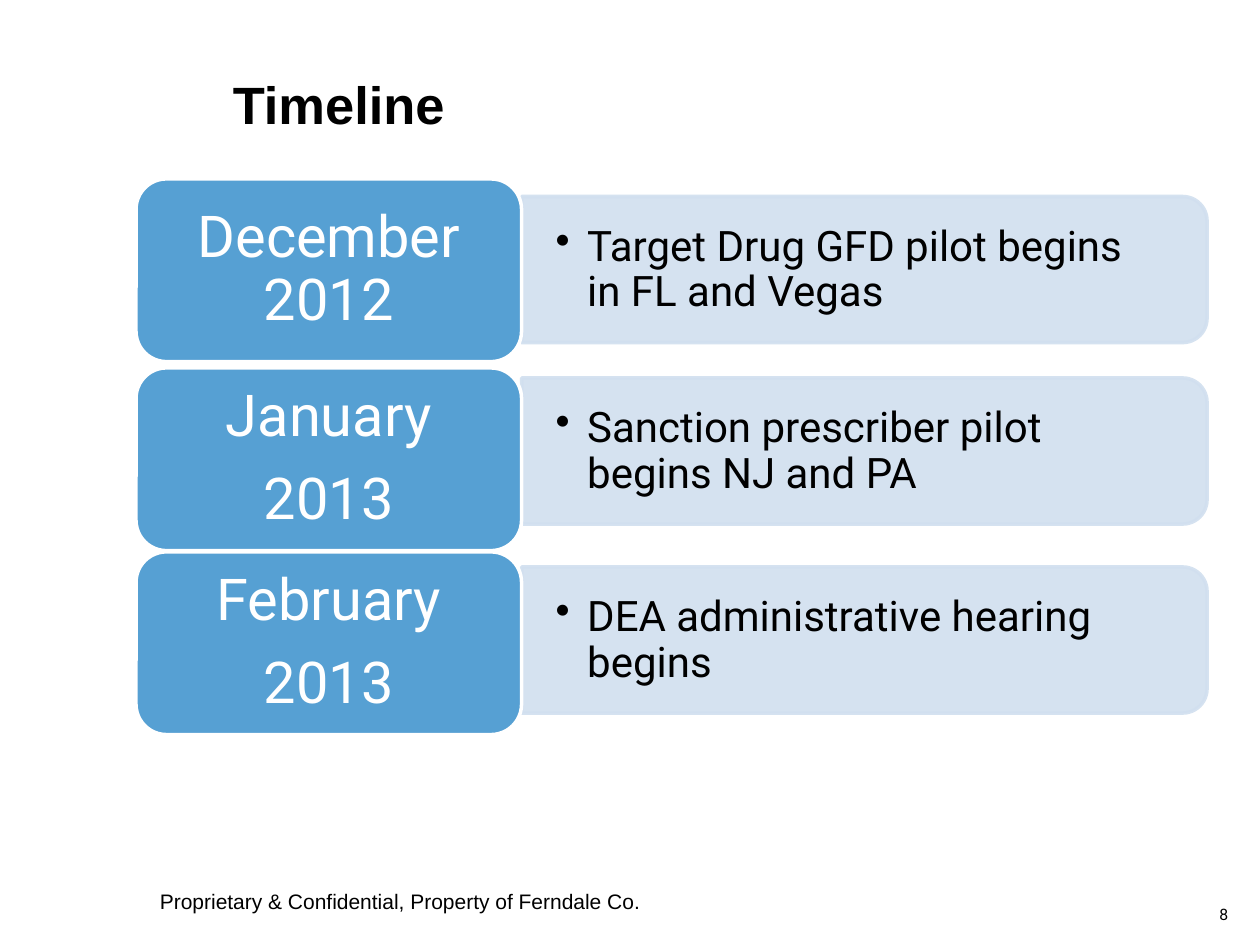
"""Build a timeline slide of three dated milestones."""
from lxml.etree import SubElement
from pptx import Presentation
from pptx.dml.color import RGBColor
from pptx.enum.shapes import MSO_SHAPE
from pptx.enum.text import MSO_ANCHOR, PP_ALIGN
from pptx.oxml.ns import qn
from pptx.util import Inches, Pt

COLORS = {"ink": "000000", "white": "FFFFFF", "card": "56A0D3", "bar": "D1DFEF"}
FORMATS = {
    "footer": {
        "frame": {},
        "paragraph": {},
        "font": {"name": "Arial", "size": Pt(12)},
        "color": "ink",
    },
    "number": {
        "frame": {},
        "paragraph": {},
        "font": {"name": "Roboto", "size": Pt(9)},
        "color": "ink",
    },
    "title": {
        "frame": {},
        "paragraph": {"line_spacing": 0.9},
        "font": {"name": "Arial", "size": Pt(30), "bold": True},
        "color": "ink",
    },
    "event": {
        "frame": {
            "vertical_anchor": MSO_ANCHOR.MIDDLE,
            "margin_left": Inches(0.27), "margin_right": Inches(0.27),
            "margin_top": Inches(0.14), "margin_bottom": Inches(0.14),
        },
        "paragraph": {"line_spacing": 0.9, "level": 1},
        "font": {"name": "Roboto", "size": Pt(24)},
        "color": "ink",
        "bullet": "•",
    },
    "date": {
        "frame": {
            "vertical_anchor": MSO_ANCHOR.MIDDLE,
            "margin_left": Inches(0.14), "margin_right": Inches(0.14),
            "margin_top": Inches(0.07), "margin_bottom": Inches(0.07),
        },
        "paragraph": {
            "line_spacing": 0.9, "space_after": Pt(11.5), "alignment": PP_ALIGN.CENTER,
        },
        "font": {"name": "Roboto", "size": Pt(33)},
        "color": "white",
    },
}
MILESTONES = [
    (1.42, 1.62, ["December 2012"], "Target Drug GFD pilot begins in FL and Vegas"),
    (2.92, 3.06, ["January", "2013"], "Sanction prescriber pilot begins NJ and PA"),
    (4.38, 4.56, ["February", "2013"], "DEA administrative hearing begins"),
]

prs = Presentation()
prs.slide_width, prs.slide_height = Inches(10), Inches(7.5)
slide = prs.slides.add_slide(prs.slide_layouts[6])


def add_text(lines, position, style):
    look = FORMATS[style]
    frame = slide.shapes.add_textbox(*map(Inches, position)).text_frame
    frame.word_wrap = True
    for key, value in look["frame"].items():
        setattr(frame, key, value)
    for index, line in enumerate(lines):
        paragraph = frame.add_paragraph() if index else frame.paragraphs[0]
        if "bullet" in look:
            properties = paragraph._p.get_or_add_pPr()
            properties.set("marL", str(Inches(0.25)))
            properties.set("indent", str(-Inches(0.25)))
            SubElement(properties, qn("a:buChar"), char=look["bullet"])
        for key, value in look["paragraph"].items():
            setattr(paragraph, key, value)
        run = paragraph.add_run()
        run.text = line
        for key, value in look["font"].items():
            setattr(run.font, key, value)
        run.font.color.rgb = RGBColor.from_string(COLORS[look["color"]])


def add_panel(preset, position, fill, outline):
    panel = slide.shapes.add_shape(preset, *map(Inches, position))
    panel.shadow.inherit = False
    panel.fill.solid()
    panel.fill.fore_color.rgb = RGBColor.from_string(COLORS[fill])
    panel.line.color.rgb = RGBColor.from_string(COLORS[outline])
    panel.line.width = Pt(2)
    return panel


add_text(["Proprietary & Confidential, Property of Ferndale Co."], (1.17, 7, 4.75, 0.5), "footer")
add_text(["8"], (9.58, 7.13, 0.42, 0.25), "number")
add_text(["Timeline"], (1.75, 0.58, 8.5, 0.92), "title")

for card_top, event_top, date, event in MILESTONES:
    bar = add_panel(
        MSO_SHAPE.ROUND_2_SAME_RECTANGLE, (6.28, event_top - 2.2, 1.16, 5.44), "bar", "bar"
    )
    bar.rotation = 90
    for tint in bar._element.spPr.iter(qn("a:srgbClr")):
        SubElement(tint, qn("a:alpha"), val="90000")
    add_text([event], (4.14, event_top, 5.38, 1.05), "event")
    add_panel(MSO_SHAPE.ROUNDED_RECTANGLE, (1.08, card_top, 3.06, 1.45), "card", "white")
    add_text(date, (1.15, card_top + 0.07, 2.92, 1.31), "date")

prs.save("out.pptx")
